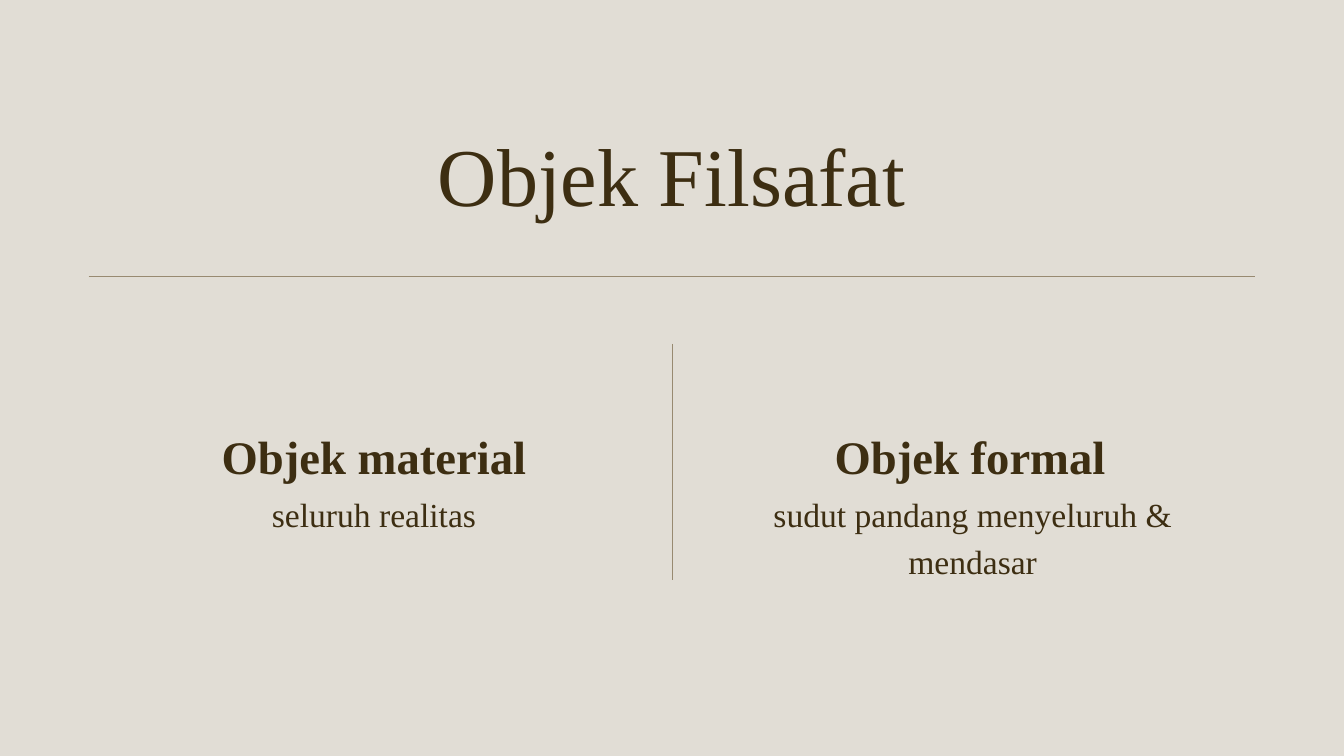
from dataclasses import dataclass

import pptx
import pptx.dml.color
import pptx.enum.shapes
import pptx.enum.text
import pptx.oxml
import pptx.util
from pptx.util import Cm


@dataclass(frozen=True)
class TextStyle:
    size: float
    line_spacing: float
    bold: bool = False


@dataclass(frozen=True)
class Theme:
    font: str = "Times New Roman"
    background: str = "E1DDD5"
    text: str = "3D2E12"
    rule: str = "988A71"
    rule_width: float = 0.75
    title: TextStyle = TextStyle(88, 105.6)
    heading: TextStyle = TextStyle(50, 70, True)
    body: TextStyle = TextStyle(36, 50.4)


THEME = Theme()


def color(value):
    return pptx.dml.color.RGBColor.from_string(value)


def add_text(slide, text, style, left, top, width, height):
    """Add a centred text box without margins; lengths are in cm."""
    shape = slide.shapes.add_textbox(Cm(left), Cm(top), Cm(width), Cm(height))
    text_frame = shape.text_frame
    text_frame.margin_left = text_frame.margin_right = 0
    text_frame.margin_top = text_frame.margin_bottom = 0
    text_frame.word_wrap = True
    text_frame.text = text
    paragraph = text_frame.paragraphs[0]
    paragraph.alignment = pptx.enum.text.PP_ALIGN.CENTER
    paragraph.line_spacing = pptx.util.Pt(style.line_spacing)
    font = paragraph.runs[0].font
    font.name = THEME.font
    font.size = pptx.util.Pt(style.size)
    font.bold = style.bold
    font.color.rgb = color(THEME.text)


def add_rule(slide, start, end):
    """Add a thin straight line between two points in cm."""
    connector = slide.shapes.add_connector(
        pptx.enum.shapes.MSO_CONNECTOR.STRAIGHT, *map(Cm, start + end))
    connector.line.color.rgb = color(THEME.rule)
    connector.line.width = pptx.util.Pt(THEME.rule_width)
    properties = connector._element.spPr
    properties.append(pptx.oxml.parse_xml(
        '<a:effectLst xmlns:a="http://schemas.openxmlformats.org/drawingml/2006/main"/>'))


def add_column(slide, heading, heading_left, body, body_left, body_width, body_height):
    add_text(slide, heading, THEME.heading, heading_left, 15.82, 16.54, 2.34)
    add_text(slide, body, THEME.body, body_left, 18.42, body_width, body_height)


def main():
    presentation = pptx.Presentation()
    presentation.slide_width = Cm(50.8)
    presentation.slide_height = Cm(28.58)
    slide = presentation.slides.add_slide(presentation.slide_layouts[6])
    slide.background.fill.solid()
    slide.background.fill.fore_color.rgb = color(THEME.background)

    add_text(slide, "Objek Filsafat", THEME.title, 6.73, 4.72, 37.31, 3.68)
    add_column(slide, "Objek material", 5.87, "seluruh realitas", 7.65, 12.98, 1.7)
    add_column(slide, "Objek formal", 28.4,
               "sudut pandang menyeluruh & mendasar", 27.1, 19.33, 3.48)
    add_rule(slide, (3.35, 10.44), (47.45, 10.44))
    add_rule(slide, (25.4, 13), (25.4, 21.92))

    presentation.save("out.pptx")


if __name__ == "__main__":
    main()
